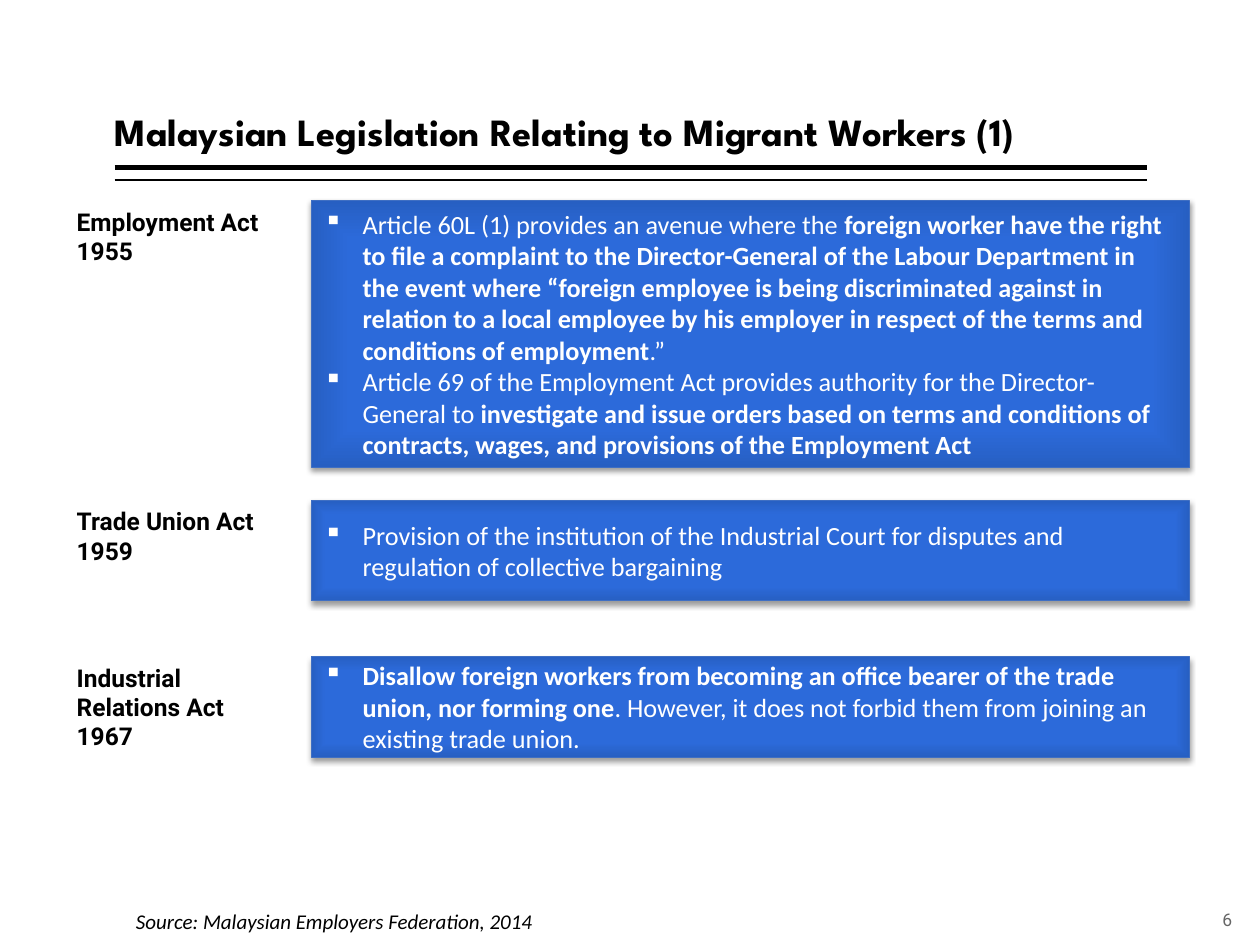
from lxml import etree
from pptx import Presentation
from pptx.dml.color import RGBColor
from pptx.enum.shapes import MSO_CONNECTOR, MSO_SHAPE
from pptx.enum.text import MSO_ANCHOR, MSO_AUTO_SIZE, PP_ALIGN
from pptx.oxml import parse_xml
from pptx.oxml.ns import nsdecls, qn
from pptx.util import Inches, Pt

BLACK = RGBColor(0, 0, 0)
WHITE = RGBColor(255, 255, 255)
GREY = RGBColor(0x66, 0x66, 0x66)
EDGE = RGBColor(0x3F, 0x6F, 0xC3)
STOPS = [(0, RGBColor(0x2C, 0x6B, 0xDC)), (71, RGBColor(0x2C, 0x6A, 0xDA)),
         (100, RGBColor(0x27, 0x5F, 0xC2))]

TITLE = "Malaysian Legislation Relating to Migrant Workers (1)"
SOURCE = "Source: Malaysian Employers Federation, 2014"
NUMBER = "6"
# Each act: name, top, box height, label height, bullets made of (text, bold) runs
ACTS = [
    ("Employment Act 1955", 1.59, 2.12, 0.57, [
        [("Article 60L (1) provides an avenue where the ", False),
         ("foreign worker have the right to file a complaint to the "
          "Director-General of the Labour Department in the event where "
          "“foreign employee is being discriminated against in relation to a "
          "local employee by his employer in respect of the terms and "
          "conditions of employment", True),
         (".”", False)],
        [("Article 69 of the Employment Act provides authority for the "
          "Director-General to ", False),
         ("investigate and issue orders based on terms and conditions of "
          "contracts, wages, and provisions of the Employment Act", True)],
    ]),
    ("Trade Union Act 1959", 3.97, 0.8, 0.57, [
        [("Provision of the institution of the Industrial Court for disputes "
          "and regulation of collective bargaining", False)],
    ]),
    ("Industrial Relations Act 1967", 5.21, 0.8, 0.81, [
        [("Disallow foreign workers from becoming an office bearer of the "
          "trade union, nor forming one", True),
         (". However, it does not forbid them from joining an existing trade "
          "union.", False)],
    ]),
]
LABEL_X, LABEL_W = 0.51, 1.79
BOX_X, BOX_W = 2.47, 6.97
RULE_X, RULE_END = 0.91, 9.1
RULES = [(1.33, 3), (1.43, 1)]


def style(font, name, size, color, bold=False, italic=False):
    font.name, font.size = name, Pt(size)
    font.color.rgb = color
    font.bold, font.italic = bold, italic


def add_text(slide, place, text, *look, **more):
    box = slide.shapes.add_textbox(*map(Inches, place))
    frame = box.text_frame
    frame.word_wrap = True
    frame.text = text
    style(frame.paragraphs[0].runs[0].font, *look, **more)
    return frame


def add_rule(slide, y, width):
    rule = slide.shapes.add_connector(
        MSO_CONNECTOR.STRAIGHT, Inches(RULE_X), Inches(y), Inches(RULE_END), Inches(y))
    rule.line.color.rgb = BLACK
    rule.line.width = Pt(width)
    etree.SubElement(rule._element.spPr, qn("a:effectLst"))


def shade(box):
    """Give the box a rectangular gradient, a thin edge and a soft shadow below."""
    box.line.color.rgb = EDGE
    box.line.width = Pt(0.5)
    stops = "".join(f'<a:gs pos="{pos * 1000}"><a:srgbClr val="{color}"/></a:gs>'
                    for pos, color in STOPS)
    fill = parse_xml(
        f'<a:gradFill {nsdecls("a")} rotWithShape="1"><a:gsLst>{stops}</a:gsLst>'
        '<a:path path="rect"><a:fillToRect l="50000" t="50000" r="50000" b="50000"/>'
        '</a:path></a:gradFill>')
    box._element.spPr.find(qn("a:ln")).addprevious(fill)
    box._element.spPr.append(parse_xml(
        f'<a:effectLst {nsdecls("a")}><a:outerShdw blurRad="{Pt(3.1)}" dist="{Pt(2)}" '
        'dir="5400000" rotWithShape="0"><a:srgbClr val="000000">'
        '<a:alpha val="38000"/></a:srgbClr></a:outerShdw></a:effectLst>'))


def add_bullet(par, runs):
    props = par._p.get_or_add_pPr()
    props.set("marL", str(Inches(0.31)))
    props.set("indent", str(-Inches(0.31)))
    etree.SubElement(props, qn("a:buChar")).set("char", "▪")
    par.alignment = PP_ALIGN.LEFT
    for text, bold in runs:
        run = par.add_run()
        run.text = text
        style(run.font, "Calibri", 15, WHITE, bold)


def add_act(slide, name, top, height, label, bullets):
    box = slide.shapes.add_shape(
        MSO_SHAPE.RECTANGLE, *map(Inches, (BOX_X, top, BOX_W, height)))
    shade(box)
    frame = box.text_frame
    frame.word_wrap = True
    frame.vertical_anchor = MSO_ANCHOR.MIDDLE
    for i, runs in enumerate(bullets):
        add_bullet(frame.add_paragraph() if i else frame.paragraphs[0], runs)
    text = add_text(slide, (LABEL_X, top, LABEL_W, label), name,
                    "Roboto", 14, BLACK, bold=True)
    text.auto_size = MSO_AUTO_SIZE.SHAPE_TO_FIT_TEXT


def add_title(slide):
    title = slide.shapes.title
    title.left, title.top, title.width, title.height = map(
        Inches, (RULE_X, 0.08, 8.07, 1.2))
    frame = title.text_frame
    frame.text = TITLE
    frame.margin_left = frame.margin_right = 0
    frame.vertical_anchor = MSO_ANCHOR.BOTTOM
    frame.auto_size = MSO_AUTO_SIZE.NONE
    par = frame.paragraphs[0]
    par.alignment, par.line_spacing = PP_ALIGN.LEFT, 0.9
    style(par.runs[0].font, "League Spartan", 22, BLACK, bold=True)


def main():
    deck = Presentation()
    deck.slide_width, deck.slide_height = Inches(10), Inches(7.5)
    slide = deck.slides.add_slide(deck.slide_layouts[5])
    for rule in RULES:
        add_rule(slide, *rule)
    add_title(slide)
    for act in ACTS:
        add_act(slide, *act)
    number = add_text(slide, (9.48, 7.1, 0.52, 0.4), NUMBER, "Roboto", 10, GREY)
    number.margin_left = number.margin_right = 0
    number.vertical_anchor = MSO_ANCHOR.MIDDLE
    number.paragraphs[0].alignment = PP_ALIGN.CENTER
    source = add_text(slide, (0.98, 7.16, 7.62, 0.3), SOURCE,
                      "Calibri", 12, BLACK, italic=True)
    source.auto_size = MSO_AUTO_SIZE.SHAPE_TO_FIT_TEXT
    deck.save("out.pptx")


if __name__ == "__main__":
    main()
